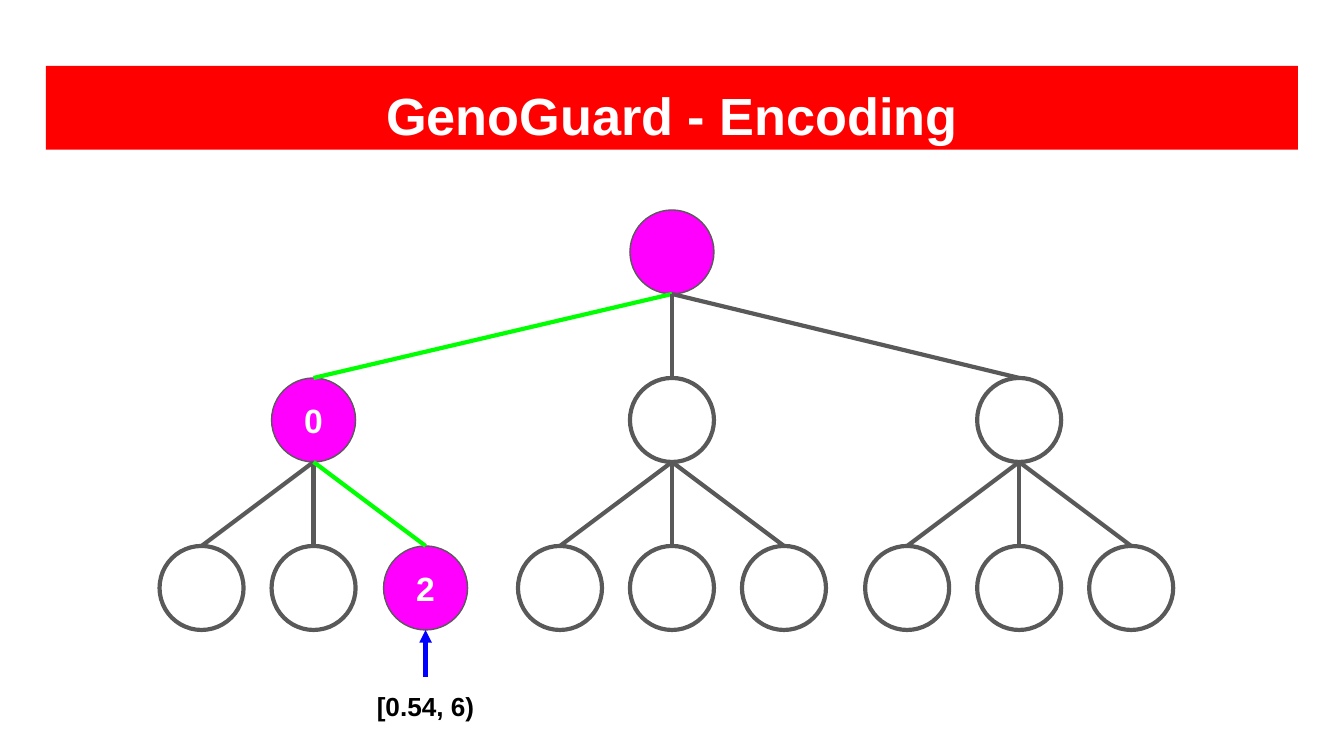
from lxml.etree import SubElement
from pptx import Presentation
from pptx.dml.color import RGBColor
from pptx.enum.shapes import MSO_CONNECTOR, MSO_SHAPE
from pptx.enum.text import MSO_ANCHOR, PP_ALIGN
from pptx.oxml.ns import qn
from pptx.util import Pt

RED, MAGENTA, GREEN, BLUE = "FF0000", "FF00FF", "00FF00", "0000FF"
GRAY, WHITE, BLACK = "595959", "FFFFFF", "000000"

NODE_SIZE = 45
LEVEL_STEP = 90
LEAF_STEP = 60
BRANCH_CENTERS = (168, 360, 546)
# Visited nodes, keyed by the child indexes leading to them
VISITED = {(): "", (0,): "0", (0, 2): "2"}


def color(value):
    return RGBColor.from_string(value)


def set_text(shape, text, size, text_color, anchor=MSO_ANCHOR.TOP, top_inset=7.2):
    frame = shape.text_frame
    frame_format = {
        "word_wrap": True,
        "vertical_anchor": anchor,
        "margin_left": Pt(7.2),
        "margin_right": Pt(7.2),
        "margin_top": Pt(top_inset),
        "margin_bottom": Pt(7.2),
    }
    for name, value in frame_format.items():
        setattr(frame, name, value)
    paragraph = frame.paragraphs[0]
    paragraph.alignment = PP_ALIGN.CENTER
    run = paragraph.add_run()
    run.text = text
    for name, value in {"name": "Arial", "size": Pt(size), "bold": True}.items():
        setattr(run.font, name, value)
    run.font.color.rgb = color(text_color)


def add_line(slide, start, end, line_color):
    connector = slide.shapes.add_connector(
        MSO_CONNECTOR.STRAIGHT, *(Pt(value) for value in (*start, *end)))
    connector.line.color.rgb = color(line_color)
    connector.line.width = Pt(2.25)
    SubElement(connector._element.spPr, qn("a:effectLst"))
    return connector


def add_title(slide, left, top, width, height):
    banner = slide.shapes.add_shape(
        MSO_SHAPE.RECTANGLE, Pt(left), Pt(top), Pt(width), Pt(height))
    banner.shadow.inherit = False
    banner.fill.solid()
    banner.fill.fore_color.rgb = color(RED)
    banner.line.fill.background()
    set_text(banner, "GenoGuard - Encoding", 28, WHITE, top_inset=9.6)


def add_node(slide, center, top, key):
    visited = key in VISITED
    node = slide.shapes.add_shape(
        MSO_SHAPE.OVAL, Pt(center - NODE_SIZE / 2), Pt(top), Pt(NODE_SIZE), Pt(NODE_SIZE))
    node.shadow.inherit = False
    node.fill.solid()
    node.fill.fore_color.rgb = color(MAGENTA if visited else WHITE)
    node.line.color.rgb = color(GRAY)
    node.line.width = Pt(0.75 if visited else 2.25)
    if VISITED.get(key):
        set_text(node, VISITED[key], 18, WHITE, MSO_ANCHOR.MIDDLE)
    return node


def add_tree(slide, root_center, top):
    # Center of every node by its key
    centers = {(): root_center}
    for branch, center in enumerate(BRANCH_CENTERS):
        centers[(branch,)] = center
        for leaf in range(3):
            centers[(branch, leaf)] = center + (leaf - 1) * LEAF_STEP

    nodes = {key: add_node(slide, center, top + len(key) * LEVEL_STEP, key)
             for key, center in centers.items()}

    # Edges run from the bottom of a parent to the top of its child
    for key, node in nodes.items():
        if key:
            child_top = top + len(key) * LEVEL_STEP
            parent_bottom = child_top - LEVEL_STEP + NODE_SIZE
            edge = add_line(slide, (centers[key[:-1]], parent_bottom),
                            (centers[key], child_top),
                            GREEN if key in VISITED else GRAY)
            edge.end_connect(node, 0)


def add_interval(slide, left, top, width, height, leaf_bottom):
    label = slide.shapes.add_textbox(Pt(left), Pt(top), Pt(width), Pt(height))
    set_text(label, "[0.54, 6)", 14, BLACK)
    center = left + width / 2
    arrow = add_line(slide, (center, top), (center, leaf_bottom), BLUE)
    SubElement(arrow.line._get_or_add_ln(), qn("a:tailEnd"), type="triangle")


def main():
    presentation = Presentation()
    presentation.slide_width, presentation.slide_height = Pt(720), Pt(405)
    slide = presentation.slides.add_slide(presentation.slide_layouts[6])
    add_title(slide, 24.6, 35.25, 670.8, 45)
    add_tree(slide, 360, 112.5)
    add_interval(slide, 182.75, 362.75, 90.5, 30, 337.5)
    presentation.save("out.pptx")


if __name__ == "__main__":
    main()
